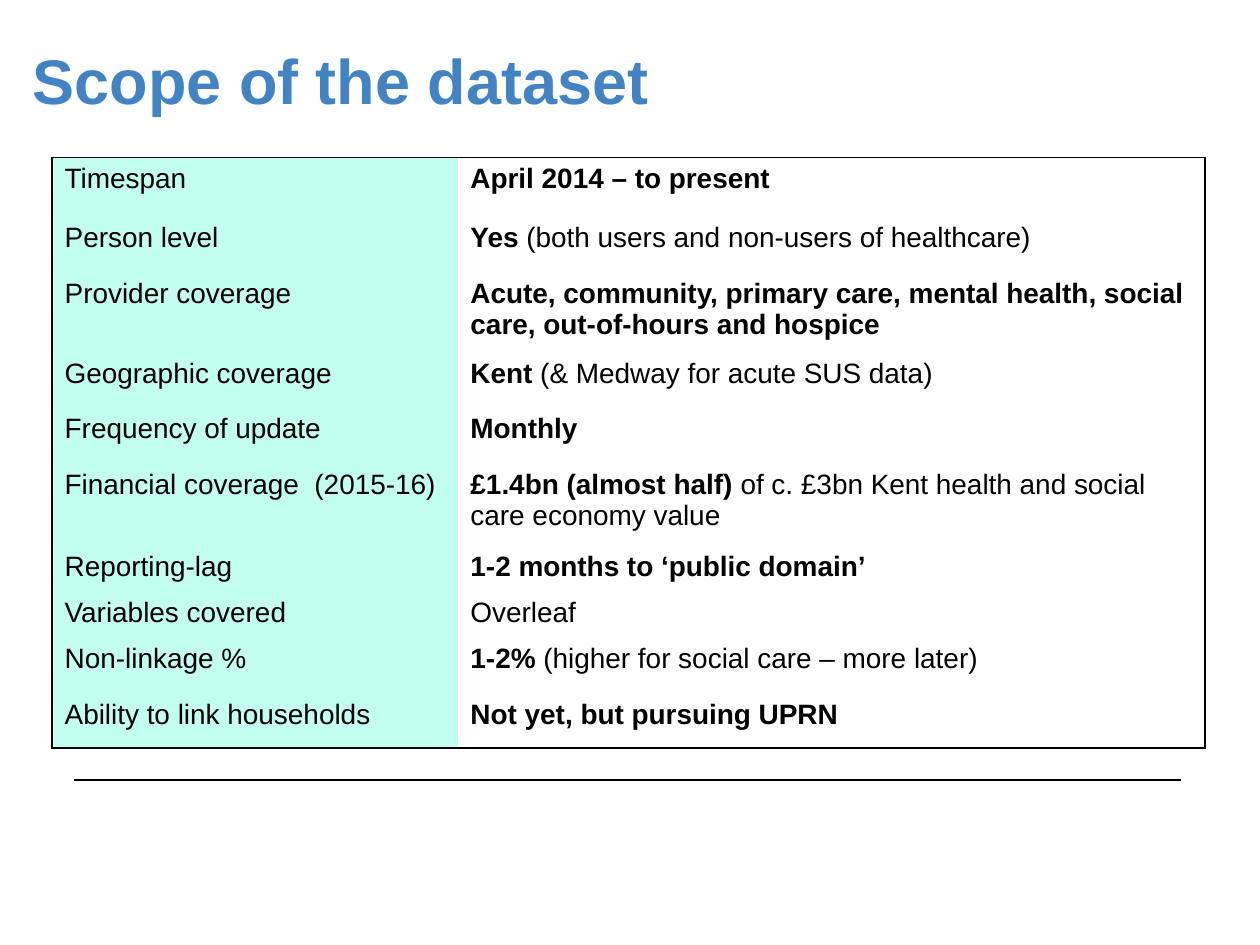
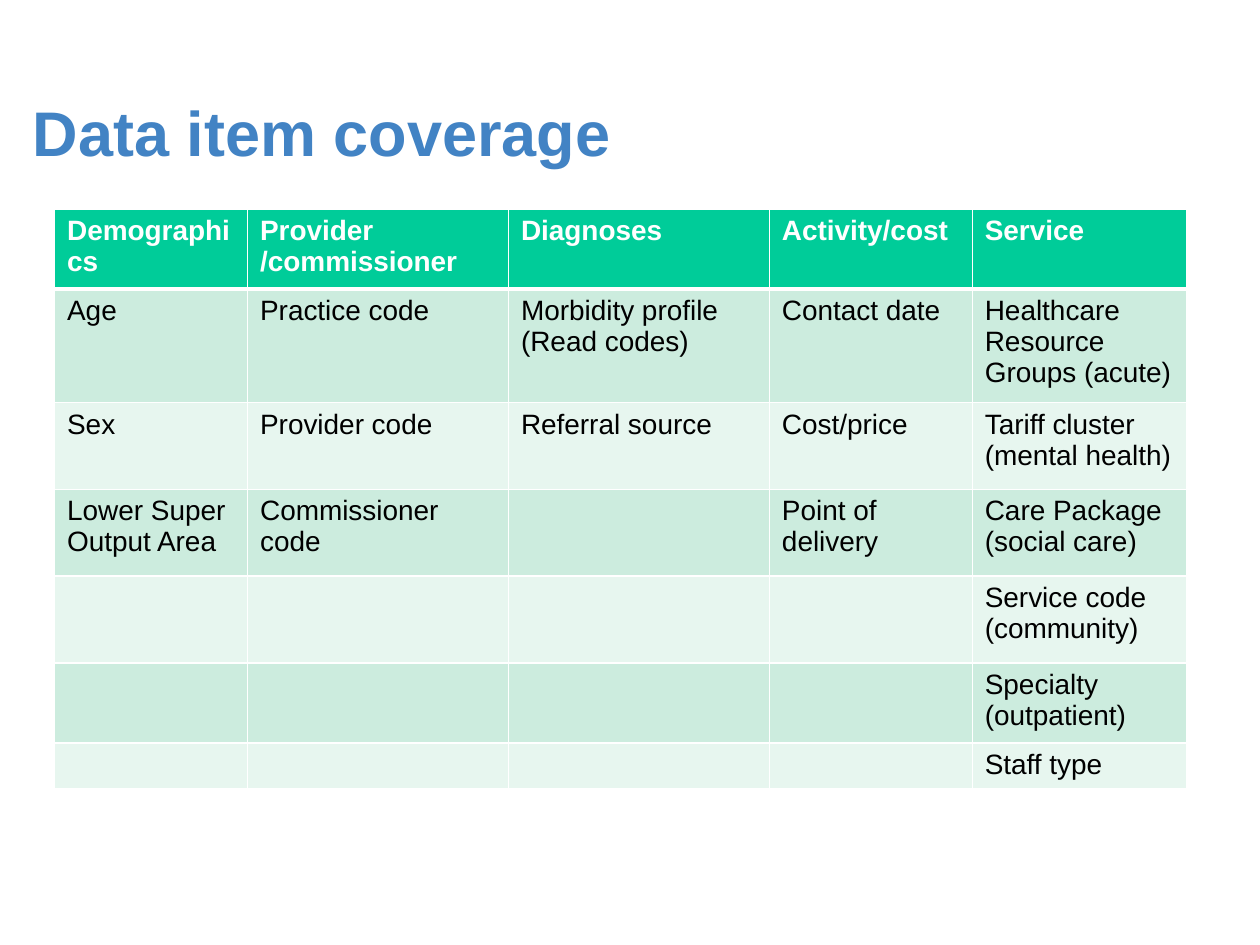
from lxml import etree
from pptx import Presentation
from pptx.dml.color import RGBColor
from pptx.enum import shapes, text
from pptx.oxml import ns
from pptx.util import Cm, Pt

FONT = "Arial"
BLACK = RGBColor(0x00, 0x00, 0x00)
WHITE = RGBColor(0xFF, 0xFF, 0xFF)
TITLE_BLUE = RGBColor(0x42, 0x83, 0xC4)
MINT = RGBColor(0xC2, 0xFF, 0xF0)
HEADER_GREEN = RGBColor(0x00, 0xCC, 0x99)
BANDS = (RGBColor(0xCC, 0xEC, 0xDE), RGBColor(0xE7, 0xF6, 0xEF))
NO_GRID_STYLE = "{2D5ABB26-0587-4C30-8999-92F81FD0307C}"

# Each value is a list of (text, bold) runs.
SCOPE = [
    ("Timespan", [("April 2014 – to present", True)]),
    ("Person level", [("Yes", True),
                      (" (both users and non-users of healthcare)", False)]),
    ("Provider coverage", [("Acute, community, primary care, mental health, "
                            "social care, out-of-hours and hospice", True)]),
    ("Geographic coverage", [("Kent", True),
                             (" (& Medway for acute SUS data)", False)]),
    ("Frequency of update", [("Monthly", True)]),
    ("Financial coverage  (2015-16)", [
        ("£1.4bn (almost half) ", True),
        ("of c. £3bn Kent health and social care economy value", False)]),
    ("Reporting-lag", [("1-2 months to ‘public domain’", True)]),
    ("Variables covered", [("Overleaf", False)]),
    ("Non-linkage %", [("1-2%", True),
                       (" (higher for social care – more later)", False)]),
    ("Ability to link households", [("Not yet, but pursuing UPRN", True)]),
]
SCOPE_COLS = (8.18, 15.06)
SCOPE_ROWS = (1.19, 1.12, 1.57, 1.12, 1.12, 1.65, 0.89, 0.89, 1.12, 1.12)

# Header followed by the items listed under it.
DATA_ITEMS = {
    "Demographics": ["Age", "Sex", "Lower Super Output Area"],
    "Provider /commissioner": ["Practice code", "Provider code",
                               "Commissioner code"],
    "Diagnoses": ["Morbidity profile (Read codes)", "Referral source"],
    "Activity/cost": ["Contact date", "Cost/price", "Point of delivery"],
    "Service": ["Healthcare Resource Groups (acute)",
                "Tariff cluster (mental health)", "Care Package (social care)",
                "Service code (community)", "Specialty (outpatient)",
                "Staff type"],
}
ITEM_COLS = (3.89, 5.26, 5.26, 4.09, 4.32)
ITEM_ROWS = (1.57, 1.57, 1.75, 1.75, 1.75, 1.57, 0.91)


def style_run(r, size, color, bold):
    r.font.name, r.font.size, r.font.bold = FONT, Pt(size), bold
    r.font.color.rgb = color


def add_title(s, title, top):
    tf = s.shapes.add_textbox(Cm(0.41), Cm(top), Cm(22.6), Cm(3.18)).text_frame
    tf.word_wrap = True
    tf.vertical_anchor = text.MSO_ANCHOR.MIDDLE
    tf.text = title
    style_run(tf.paragraphs[0].runs[0], 36, TITLE_BLUE, True)


def add_footer_rule(s):
    rule = s.shapes.add_connector(shapes.MSO_CONNECTOR.STRAIGHT,
                                  Cm(1.5), Cm(15.72), Cm(23.8), Cm(15.72))
    rule.line.color.rgb = BLACK
    rule.line.width = Pt(1)
    etree.SubElement(rule._element.spPr, ns.qn("a:effectLst"))


def add_base_slide(prs, title, title_top):
    s = prs.slides.add_slide(prs.slide_layouts[6])
    add_title(s, title, title_top)
    add_footer_rule(s)
    return s


def add_plain_table(s, left, top, cols, rows):
    """Add a table without style lines, sized by its columns and rows in cm."""
    table = s.shapes.add_table(len(rows), len(cols), Cm(left), Cm(top),
                               Cm(sum(cols)), Cm(sum(rows))).table
    table.first_row = table.horz_banding = False
    table._tbl.tblPr.find(ns.qn("a:tableStyleId")).text = NO_GRID_STYLE
    for col, width in zip(table.columns, cols):
        col.width = Cm(width)
    for row, height in zip(table.rows, rows):
        row.height = Cm(height)
    return table


def set_borders(cell, color, widths):
    """Draw cell sides; widths maps L, R, T, B to points, in that order."""
    tc_pr = cell._tc.get_or_add_tcPr()
    for side, width in widths.items():
        ln = etree.SubElement(tc_pr, ns.qn(f"a:ln{side}"), w=str(Pt(width)))
        fill = etree.SubElement(ln, ns.qn("a:solidFill"))
        etree.SubElement(fill, ns.qn("a:srgbClr"), val=str(color))


def fill_cell(cell, runs, fill, color=BLACK):
    cell.fill.solid()
    cell.fill.fore_color.rgb = fill
    p = cell.text_frame.paragraphs[0]
    for words, bold in runs:
        r = p.add_run()
        r.text = words
        style_run(r, 16, color, bold)
    if not runs:
        p._p.get_or_add_endParaRPr().set("sz", "1600")


def add_scope_table(s, left, top):
    table = add_plain_table(s, left, top, SCOPE_COLS, SCOPE_ROWS)
    last = len(SCOPE) - 1
    for i, (label, value) in enumerate(SCOPE):
        for j, (runs, fill) in enumerate((([(label, False)], MINT),
                                          (value, WHITE))):
            cell = table.cell(i, j)
            outer = {"L": j == 0, "R": j == 1, "T": i == 0, "B": i == last}
            set_borders(cell, BLACK, {k: 1 for k, on in outer.items() if on})
            fill_cell(cell, runs, fill)


def add_item_table(s, left, top):
    table = add_plain_table(s, left, top, ITEM_COLS, ITEM_ROWS)
    for j, (header, items) in enumerate(DATA_ITEMS.items()):
        for i in range(len(ITEM_ROWS)):
            cell = table.cell(i, j)
            set_borders(cell, WHITE, {"L": 1, "R": 1, "T": 3 if i == 1 else 1,
                                      "B": 3 if i == 0 else 1})
            if i == 0:
                fill_cell(cell, [(header, True)], HEADER_GREEN, WHITE)
            else:
                runs = [(item, False) for item in items[i - 1:i]]
                fill_cell(cell, runs, BANDS[(i - 1) % 2])


def main():
    prs = Presentation()
    prs.slide_width, prs.slide_height = Cm(25.4), Cm(19.05)
    add_scope_table(add_base_slide(prs, "Scope of the dataset", 0), 1.05, 3.17)
    add_item_table(add_base_slide(prs, "Data item coverage", 1.05), 1.1, 4.22)
    prs.save("out.pptx")


if __name__ == "__main__":
    main()
